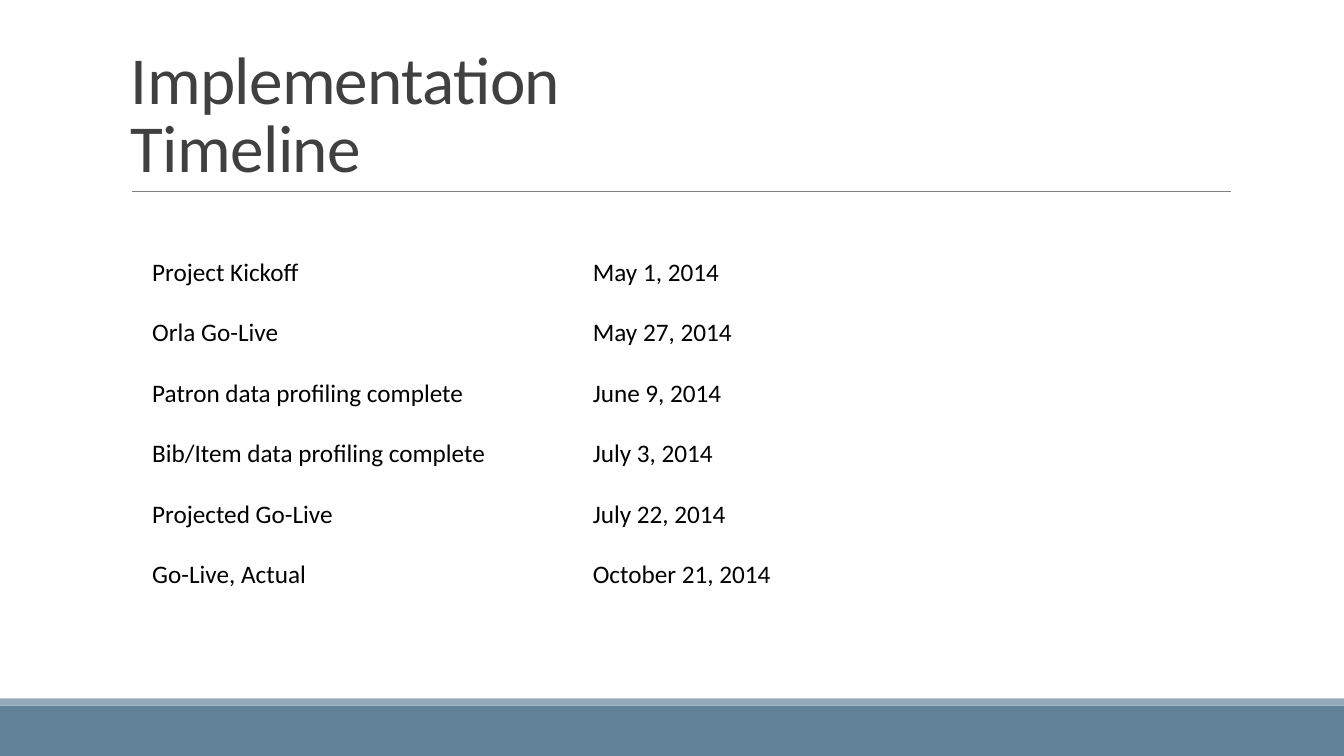
from pptx import Presentation
from pptx import util as u
from pptx.dml.color import RGBColor
from pptx.enum import shapes, text
from pptx.oxml.ns import qn
from lxml import etree

BLUE = RGBColor(0x61, 0x81, 0x97)
LIGHT_BLUE = RGBColor(0x92, 0xA9, 0xB9)
GREY = RGBColor(0x80, 0x80, 0x80)
DARK_GREY = RGBColor(0x40, 0x40, 0x40)
BLACK = RGBColor(0, 0, 0)

MILESTONES = [
    ("Project Kickoff", "May 1, 2014"),
    ("Orla Go-Live", "May 27, 2014"),
    ("Patron data profiling complete", "June 9, 2014"),
    ("Bib/Item data profiling complete", "July 3, 2014"),
    ("Projected Go-Live", "July 22, 2014"),
    ("Go-Live, Actual", "October 21, 2014"),
]


def write(paragraph, words, size=18, color=BLACK, font="Calibri", tracking=None):
    run = paragraph.add_run()
    run.text = words
    run.font.name = font
    run.font.size = u.Pt(size)
    run.font.color.rgb = color
    if tracking is not None:
        run.font._element.set("spc", str(round(tracking * 100)))


class SlideBuilder:
    cell_margin = u.Inches(0.15)

    def __init__(self, slide):
        self.slide = slide

    def band(self, top, height, color):
        shape = self.slide.shapes.add_shape(
            shapes.MSO_SHAPE.RECTANGLE, 0, u.Inches(top), u.Inches(13.33), u.Inches(height))
        shape.shadow.inherit = False
        shape.fill.solid()
        shape.fill.fore_color.rgb = color
        shape.line.fill.background()

    def rule(self, left, right, top, color, width):
        line = self.slide.shapes.add_connector(
            shapes.MSO_CONNECTOR.STRAIGHT,
            u.Inches(left), u.Inches(top), u.Inches(right), u.Inches(top))
        line.line.color.rgb = color
        line.line.width = u.Pt(width)
        etree.SubElement(line._element.spPr, qn("a:effectLst"))

    def title(self, words, left, top, width, height):
        box = self.slide.shapes.add_textbox(
            u.Inches(left), u.Inches(top), u.Inches(width), u.Inches(height))
        frame = box.text_frame
        frame.word_wrap = True
        frame.vertical_anchor = text.MSO_ANCHOR.BOTTOM
        paragraph = frame.paragraphs[0]
        paragraph.line_spacing = 0.85
        write(paragraph, words, size=48, color=DARK_GREY, tracking=-0.5)

    def table(self, rows, left, top, widths, row_height):
        table = self.slide.shapes.add_table(
            len(rows), len(widths), u.Inches(left), u.Inches(top),
            u.Inches(sum(widths)), u.Inches(row_height * len(rows))).table
        table.first_row = table.horz_banding = False
        for column, width in zip(table.columns, widths):
            column.width = u.Inches(width)
        for row, values in zip(table.rows, rows):
            for cell, value in zip(row.cells, values):
                cell.fill.background()
                cell.margin_left = cell.margin_right = self.cell_margin
                cell.margin_top = cell.margin_bottom = self.cell_margin
                write(cell.text_frame.paragraphs[0], value)


def main():
    presentation = Presentation()
    presentation.slide_width = u.Inches(13.33)
    presentation.slide_height = u.Inches(7.5)
    builder = SlideBuilder(presentation.slides.add_slide(presentation.slide_layouts[6]))

    # Footer bands and title rule
    builder.band(7, 0.5, BLUE)
    builder.band(6.93, 0.07, LIGHT_BLUE)
    builder.rule(1.31, 12.21, 1.9, GREY, 0.5)

    # Title and milestones
    builder.title("Implementation Timeline", 1.2, 0.31, 6.3, 1.59)
    builder.table(MILESTONES, 1.36, 2.4, [4.37, 6.47], 0.6)

    presentation.save("out.pptx")


if __name__ == "__main__":
    main()
